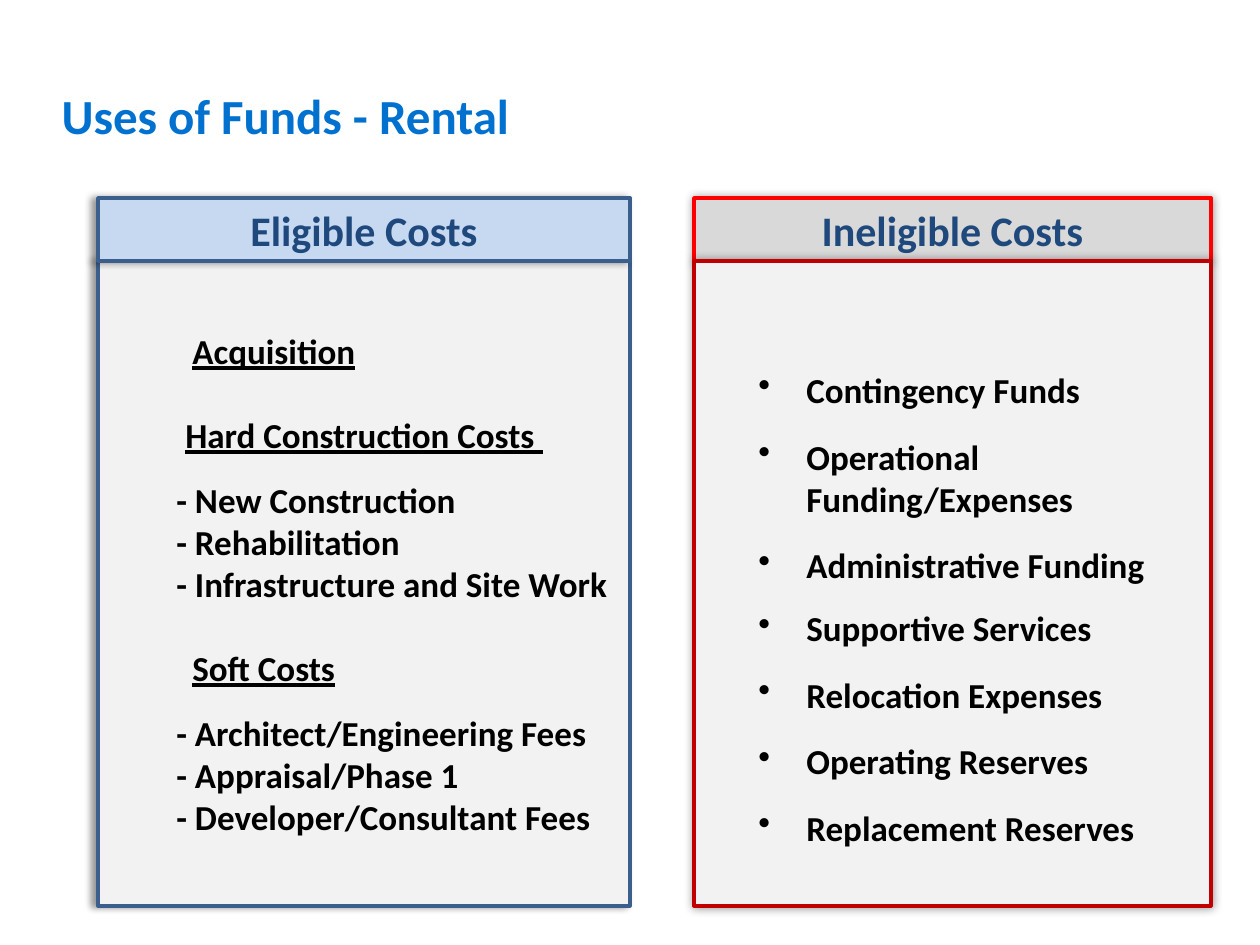
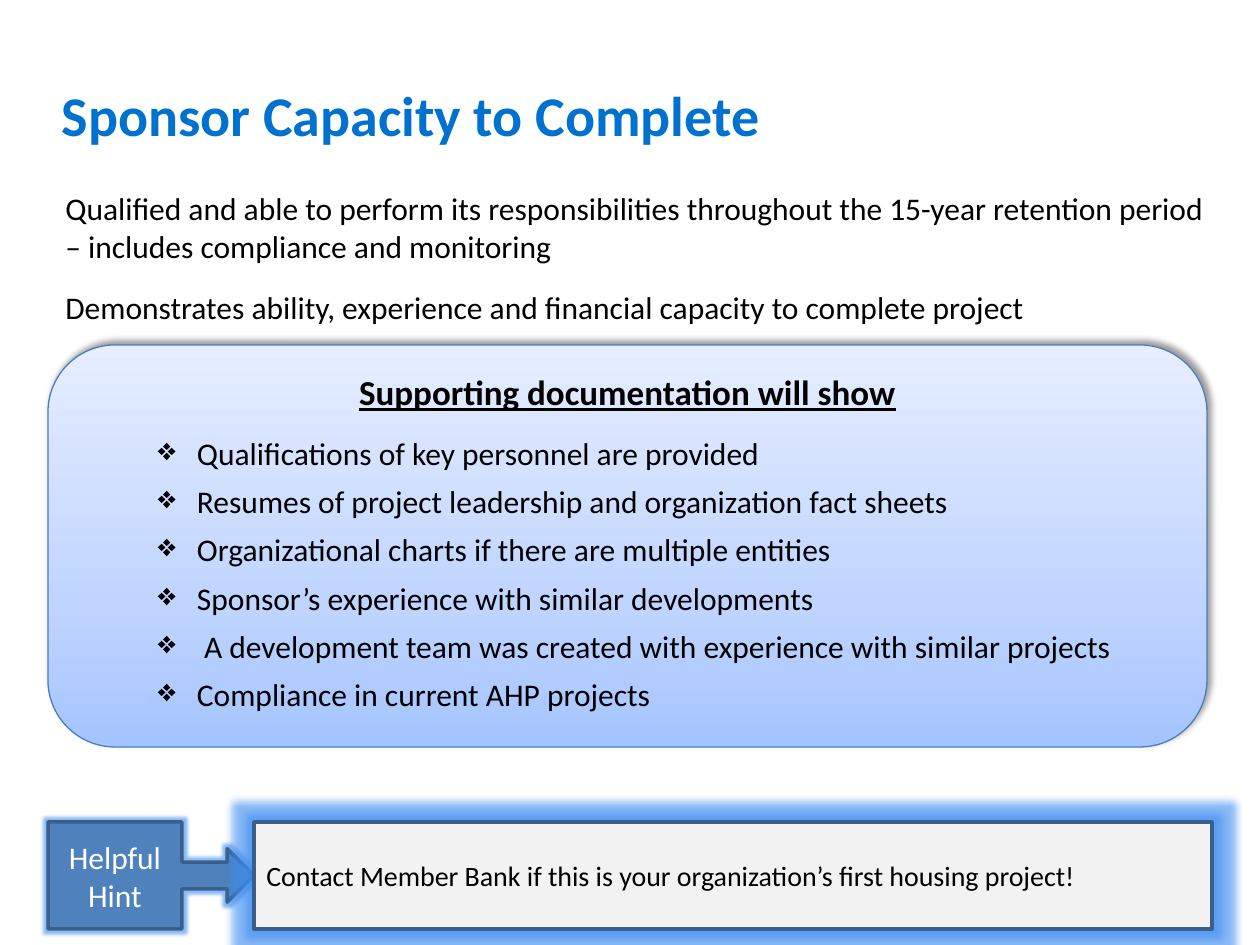
import dataclasses

import lxml.etree
import pptx
import pptx.dml.color
import pptx.enum.shapes
import pptx.enum.text
import pptx.oxml.ns
import pptx.util

RGB = pptx.dml.color.RGBColor
SHAPE = pptx.enum.shapes.MSO_SHAPE
ANCHOR = pptx.enum.text.MSO_ANCHOR
ALIGN = pptx.enum.text.PP_ALIGN
qn = pptx.oxml.ns.qn

# Shared look
PX_PER_INCH = 126
FONT = "Calibri"
TITLE_BLUE = RGB(0x00, 0x71, 0xCE)
HEADING_NAVY = RGB(0x1F, 0x49, 0x7D)
BORDER_BLUE = RGB(0x3A, 0x5F, 0x8C)
SOFT_BORDER = RGB(0x4B, 0x7E, 0xBC)
HEADER_BLUE = RGB(0xC6, 0xD9, 0xF1)
HEADER_GRAY = RGB(0xD9, 0xD9, 0xD9)
PANEL_GRAY = RGB(0xF2, 0xF2, 0xF2)
BRIGHT_RED = RGB(0xFF, 0x00, 0x00)
DARK_RED = RGB(0xC0, 0x00, 0x00)
HINT_BLUE = RGB(0x4F, 0x81, 0xBD)
GLOW_BLUE = RGB(0x3C, 0x8C, 0xF0)
BLACK = RGB(0x00, 0x00, 0x00)
WHITE = RGB(0xFF, 0xFF, 0xFF)
DOCUMENT_GRADIENT = [(0, RGB(0xA4, 0xC4, 0xFF)), (35, RGB(0xBF, 0xD4, 0xFF)),
                     (100, RGB(0xE6, 0xEE, 0xFF))]

# Cost panels: left and width of each column, top and height of each row
ELIGIBLE = (98, 532)
INELIGIBLE = (694, 517)
HEADER_ROW = (198, 63)
BODY_ROW = (261, 645)

# Shadows: blur and distance in points, direction in degrees
LEFT_SHADOW = (4, 3, 180)
EVEN_SHADOW = (5, 0, 0)
UPPER_RIGHT_SHADOW = (4, 3, 315)


@dataclasses.dataclass
class Line:
    text: str
    size: int = 20
    bold: bool = False
    underline: bool = False
    color: RGB = BLACK
    align: ALIGN = ALIGN.LEFT
    before: int = 0
    after: int = 0
    indent: int = 0
    hanging: int = 0
    bullet: str = ""


def px(length):
    return pptx.util.Emu(round(length * 914400 / PX_PER_INCH))


def write_lines(frame, lines, anchor=ANCHOR.TOP):
    frame.word_wrap = True
    frame.vertical_anchor = anchor
    for index, line in enumerate(lines):
        paragraph = frame.add_paragraph() if index else frame.paragraphs[0]
        paragraph.text = line.text
        paragraph.alignment = line.align
        paragraph.space_before = pptx.util.Pt(line.before)
        paragraph.space_after = pptx.util.Pt(line.after)
        properties = paragraph._p.get_or_add_pPr()
        properties.set("marL", str(px(line.indent)))
        properties.set("indent", str(px(-line.hanging)))
        if line.bullet:
            lxml.etree.SubElement(properties, qn("a:buChar"), char=line.bullet)
        else:
            lxml.etree.SubElement(properties, qn("a:buNone"))
        for run in paragraph.runs:
            run.font.name = FONT
            run.font.size = pptx.util.Pt(line.size)
            run.font.bold = line.bold
            run.font.underline = line.underline
            run.font.color.rgb = line.color


def add_title(slide, text, size):
    title = slide.shapes.title
    title.left, title.top, title.width, title.height = map(px, (49, 83, 1040, 63))
    title.text_frame.auto_size = pptx.enum.text.MSO_AUTO_SIZE.NONE
    write_lines(title.text_frame, [Line(text, size, True, color=TITLE_BLUE)],
                ANCHOR.MIDDLE)


def add_box(slide, kind, area, border, fill=None, weight=2):
    box = slide.shapes.add_shape(kind, *map(px, area))
    if fill is not None:
        box.fill.solid()
        box.fill.fore_color.rgb = fill
    box.line.color.rgb = border
    box.line.width = pptx.util.Pt(weight)
    box.shadow.inherit = False
    return box


def add_effect(box, tag, color, opacity, **settings):
    effects = box._element.spPr.find(qn("a:effectLst"))
    effect = lxml.etree.SubElement(effects, qn(tag), **settings)
    tint = lxml.etree.SubElement(effect, qn("a:srgbClr"), val=str(color))
    lxml.etree.SubElement(tint, qn("a:alpha"), val=str(opacity * 1000))


def cast_shadow(box, shadow):
    blur, distance, direction = shadow
    add_effect(box, "a:outerShdw", BLACK, 40,
               blurRad=str(pptx.util.Pt(blur)), dist=str(pptx.util.Pt(distance)),
               dir=str(direction * 60000), algn="ctr", rotWithShape="0")


def cast_glow(box, radius):
    add_effect(box, "a:glow", GLOW_BLUE, 60, rad=str(pptx.util.Pt(radius)))


def fill_upward(box, stops):
    box.fill.gradient()
    box.fill.gradient_angle = 90
    stop_list = box._element.spPr.find(".//" + qn("a:gsLst"))
    for stop in list(stop_list):
        stop_list.remove(stop)
    for position, color in stops:
        stop = lxml.etree.SubElement(stop_list, qn("a:gs"), pos=str(position * 1000))
        lxml.etree.SubElement(stop, qn("a:srgbClr"), val=str(color))


def add_cost_box(slide, column, row, fill, border, shadow, lines,
                 anchor=ANCHOR.TOP):
    left, width = column
    top, height = row
    box = add_box(slide, SHAPE.RECTANGLE, (left, top, width, height), border, fill)
    cast_shadow(box, shadow)
    write_lines(box.text_frame, lines, anchor)
    return box


def cost_header(text):
    return [Line(text, 24, True, color=HEADING_NAVY, align=ALIGN.CENTER)]


def cost_group(heading, items):
    first, *rest = items
    return [heading, Line(first, bold=True, indent=66, before=13),
            *(Line(item, bold=True, indent=66) for item in rest)]


def build_uses_of_funds(slide):
    add_title(slide, "Uses of Funds - Rental", 28)

    eligible_costs = [
        Line("Acquisition", bold=True, underline=True, indent=82),
        *cost_group(Line("Hard Construction Costs ", bold=True, underline=True,
                         align=ALIGN.CENTER, before=24),
                    ["- New Construction", "- Rehabilitation",
                     "- Infrastructure and Site Work"]),
        *cost_group(Line("Soft Costs", bold=True, underline=True,
                         indent=82, before=24),
                    ["- Architect/Engineering Fees", "- Appraisal/Phase 1",
                     "- Developer/Consultant Fees"]),
    ]
    ineligible_costs = [
        Line(text, bold=True, before=gap, indent=100, hanging=48, bullet="•")
        for text, gap in [
            ("Contingency Funds", 0), ("Operational Funding/Expenses", 14),
            ("Administrative Funding", 14), ("Supportive Services", 12),
            ("Relocation Expenses", 14), ("Operating Reserves", 14),
            ("Replacement Reserves", 14)]
    ]

    # Stacking order decides which shadow falls on which neighbour
    add_cost_box(slide, INELIGIBLE, HEADER_ROW, HEADER_GRAY, BRIGHT_RED,
                 EVEN_SHADOW, cost_header("Ineligible Costs"))
    add_cost_box(slide, ELIGIBLE, BODY_ROW, PANEL_GRAY, BORDER_BLUE,
                 LEFT_SHADOW, eligible_costs, ANCHOR.MIDDLE)
    ineligible_body = add_cost_box(slide, INELIGIBLE, BODY_ROW, PANEL_GRAY, DARK_RED,
                                   EVEN_SHADOW, ineligible_costs, ANCHOR.MIDDLE)
    ineligible_body.text_frame.margin_top = px(63)
    ineligible_body.text_frame.margin_bottom = px(13)
    add_cost_box(slide, ELIGIBLE, HEADER_ROW, HEADER_BLUE, BORDER_BLUE,
                 LEFT_SHADOW, cost_header("Eligible Costs"))


def build_sponsor_capacity(slide):
    add_title(slide, "Sponsor Capacity to Complete", 32)

    # Supporting documentation
    documentation = add_box(slide, SHAPE.ROUNDED_RECTANGLE, (48, 345, 1159, 402),
                            SOFT_BORDER, weight=0.75)
    fill_upward(documentation, DOCUMENT_GRADIENT)
    cast_shadow(documentation, UPPER_RIGHT_SHADOW)
    evidence = [
        "Qualifications of key personnel are provided",
        "Resumes of project leadership and organization fact sheets",
        "Organizational charts if there are multiple entities",
        "Sponsor’s experience with similar developments",
        " A development team was created with experience with similar projects",
        "Compliance in current AHP projects",
    ]
    write_lines(documentation.text_frame, [
        Line("Supporting documentation will show", bold=True, underline=True,
             align=ALIGN.CENTER, after=12),
        *(Line(item, 18, after=6, indent=117, hanging=39, bullet="❖")
          for item in evidence)])

    # Requirements
    requirements = slide.shapes.add_textbox(*map(px, (53, 183, 1168, 160)))
    write_lines(requirements.text_frame, [
        Line("Qualified and able to perform its responsibilities throughout the "
             "15-year retention period – includes compliance and monitoring", 18),
        Line("Demonstrates ability, experience and financial capacity to "
             "complete project", 18, before=13)])

    # Helpful hint
    hint_label = add_box(slide, SHAPE.RIGHT_ARROW_CALLOUT, (48, 822, 206, 107),
                         BORDER_BLUE, HINT_BLUE)
    cast_glow(hint_label, 4)
    write_lines(hint_label.text_frame,
                [Line("Helpful Hint", 18, color=WHITE, align=ALIGN.CENTER)],
                ANCHOR.MIDDLE)
    hint = add_box(slide, SHAPE.RECTANGLE, (254, 822, 958, 107),
                   BORDER_BLUE, PANEL_GRAY)
    cast_glow(hint, 9)
    write_lines(hint.text_frame,
                [Line("Contact Member Bank if this is your organization’s first "
                      "housing project!", 16)], ANCHOR.MIDDLE)


def main():
    deck = pptx.Presentation()
    deck.slide_width, deck.slide_height = px(1260), px(945)
    title_only = deck.slide_layouts[5]
    for build in (build_uses_of_funds, build_sponsor_capacity):
        build(deck.slides.add_slide(title_only))
    deck.save("out.pptx")


if __name__ == "__main__":
    main()
